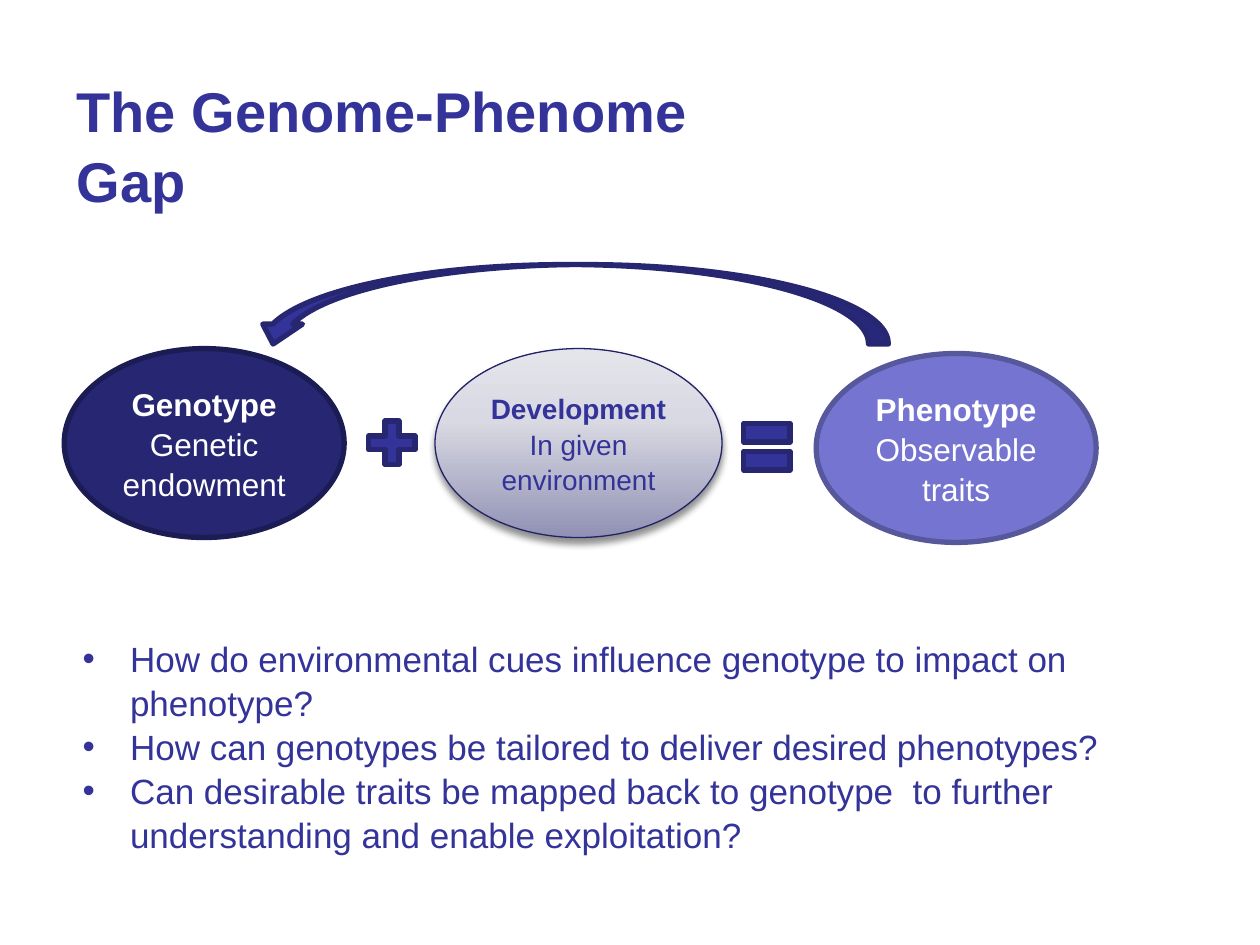
from dataclasses import dataclass

from pptx import Presentation
from pptx.dml.color import RGBColor
from pptx.enum.shapes import MSO_SHAPE
from pptx.enum.text import MSO_ANCHOR, MSO_AUTO_SIZE, PP_ALIGN
from pptx.oxml import parse_xml
from pptx.oxml.ns import nsdecls, qn
from pptx.util import Pt


@dataclass(frozen=True)
class Theme:
    font: str = "Arial"
    ink: str = "333399"
    edge: str = "262671"
    white: str = "FFFFFF"
    genotype: tuple = ("262672", "1C1C54")
    phenotype: tuple = ("7575D1", "57579B")
    development_edge: str = "222267"
    stops: tuple = ((0, "9191B5"), (62, "D9D9E3"), (100, "E4E4EB"))
    title: int = 32
    body: int = 20
    label: int = 18
    small: int = 16
    heavy: float = 3
    thin: float = 0.75
    spacing: float = 1.05


def assign(target, values):
    for name, value in values.items():
        setattr(target, name, value)


class Deck:
    def __init__(self, theme, width, height):
        self.theme = theme
        self.prs = Presentation()
        assign(self.prs, {"slide_width": Pt(width), "slide_height": Pt(height)})
        self.s = self.prs.slides.add_slide(self.prs.slide_layouts[6])

    def paragraph(self, tf, i, text, size, color, bold=False, align=PP_ALIGN.LEFT, bullet=False):
        p = tf.paragraphs[0] if i == 0 else tf.add_paragraph()
        if bullet:
            pPr = p._p.get_or_add_pPr()
            pPr.set("marL", str(Pt(27)))
            pPr.set("indent", str(-Pt(27)))
            pPr.append(parse_xml(f'<a:buFont {nsdecls("a")} typeface="{self.theme.font}"/>'))
            pPr.append(parse_xml(f'<a:buChar {nsdecls("a")} char="•"/>'))
        assign(p, {"alignment": align, "line_spacing": self.theme.spacing})
        r = p.add_run()
        r.text = text
        assign(r.font, {"name": self.theme.font, "size": Pt(size), "bold": bold})
        r.font.color.rgb = RGBColor.from_string(color)

    def text(self, box, lines, size, bold=False, bullet=False, auto_size=MSO_AUTO_SIZE.NONE):
        tf = self.s.shapes.add_textbox(*map(Pt, box)).text_frame
        assign(tf, {"word_wrap": True, "auto_size": auto_size})
        for i, line in enumerate(lines):
            self.paragraph(tf, i, line, size, self.theme.ink, bold, bullet=bullet)

    def shape(self, kind, box, fill, line, weight, flip=False):
        sp = self.s.shapes.add_shape(kind, *map(Pt, box))
        sp.shadow.inherit = False
        sp.fill.solid()
        sp.fill.fore_color.rgb = RGBColor.from_string(fill)
        sp.line.color.rgb = RGBColor.from_string(line)
        sp.line.width = Pt(weight)
        if flip:
            sp._element.spPr.find(qn("a:xfrm")).set("flipH", "1")
        return sp

    def oval(self, box, heading, detail, size, color, fill, line, weight):
        sp = self.shape(MSO_SHAPE.OVAL, box, fill, line, weight)
        tf = sp.text_frame
        assign(tf, {"word_wrap": True, "vertical_anchor": MSO_ANCHOR.MIDDLE})
        for i, line_text in enumerate((heading, detail)):
            self.paragraph(tf, i, line_text, size, color, i == 0, PP_ALIGN.CENTER)
        return sp

    def shade(self, sp, stops):
        spPr = sp._element.spPr
        gs = "".join(
            f'<a:gs pos="{pos * 1000}"><a:srgbClr val="{color}"/></a:gs>' for pos, color in stops
        )
        spPr.replace(spPr.find(qn("a:solidFill")), parse_xml(
            f'<a:gradFill {nsdecls("a")} rotWithShape="1"><a:gsLst>{gs}</a:gsLst>'
            '<a:lin ang="16200000" scaled="0"/></a:gradFill>'
        ))
        spPr.find(qn("a:effectLst")).append(parse_xml(
            f'<a:outerShdw {nsdecls("a")} blurRad="{Pt(4)}" dist="{Pt(3)}" dir="5400000" '
            'rotWithShape="0"><a:srgbClr val="000000"><a:alpha val="43000"/>'
            '</a:srgbClr></a:outerShdw>'
        ))


def main():
    t = Theme()
    deck = Deck(t, 720, 540)
    deck.text((36.7, 38, 374.4, 39.6), ["The Genome-Phenome Gap"], t.title, bold=True)

    deck.oval((36.7, 199.2, 160, 108), "Genotype", "Genetic endowment",
              t.label, t.white, *t.genotype, t.heavy)
    development = deck.oval((248.6, 199.2, 164, 108), "Development", "In given environment",
                            t.small, t.ink, t.white, t.development_edge, t.thin)
    deck.shade(development, t.stops)
    deck.oval((466.4, 202, 160, 108), "Phenotype", "Observable traits",
              t.label, t.white, *t.phenotype, t.heavy)

    deck.shape(MSO_SHAPE.MATH_PLUS, (206, 236.2, 36, 33.8), t.ink, t.edge, t.heavy)
    deck.shape(MSO_SHAPE.MATH_EQUAL, (420.3, 232.6, 36, 45.4), t.ink, t.edge, t.heavy)

    deck.text((40.2, 359.3, 666, 128.2), [
        "How do environmental cues influence genotype to impact on phenotype?",
        "How can genotypes be tailored to deliver desired phenotypes?",
        "Can desirable traits be mapped back to genotype  to further understanding "
        "and enable exploitation?",
    ], t.body, bullet=True, auto_size=MSO_AUTO_SIZE.SHAPE_TO_FIT_TEXT)

    deck.shape(MSO_SHAPE.CURVED_DOWN_ARROW, (144.7, 151.2, 363, 45.4),
               t.ink, t.edge, t.heavy, flip=True)
    deck.prs.save("out.pptx")


if __name__ == "__main__":
    main()
